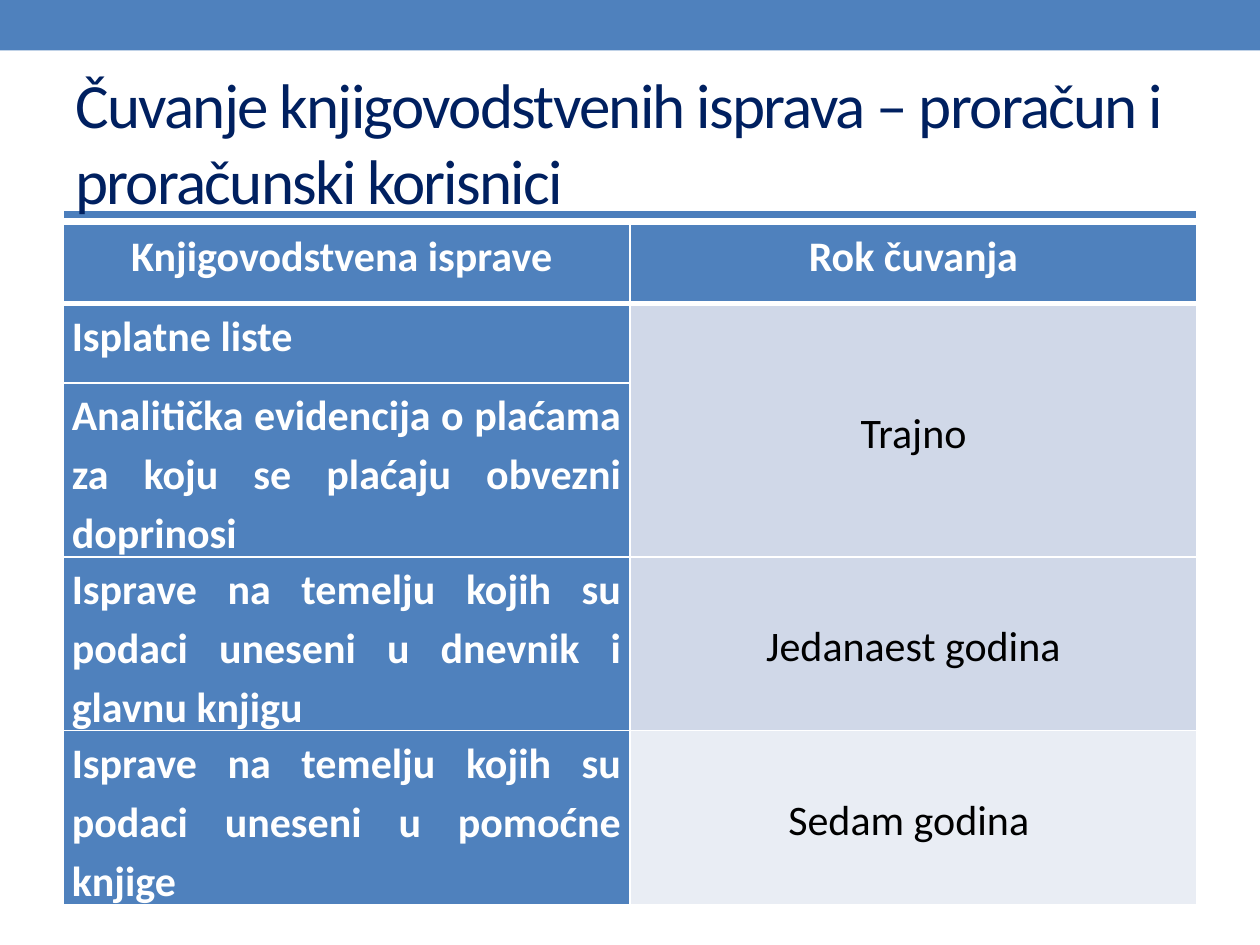
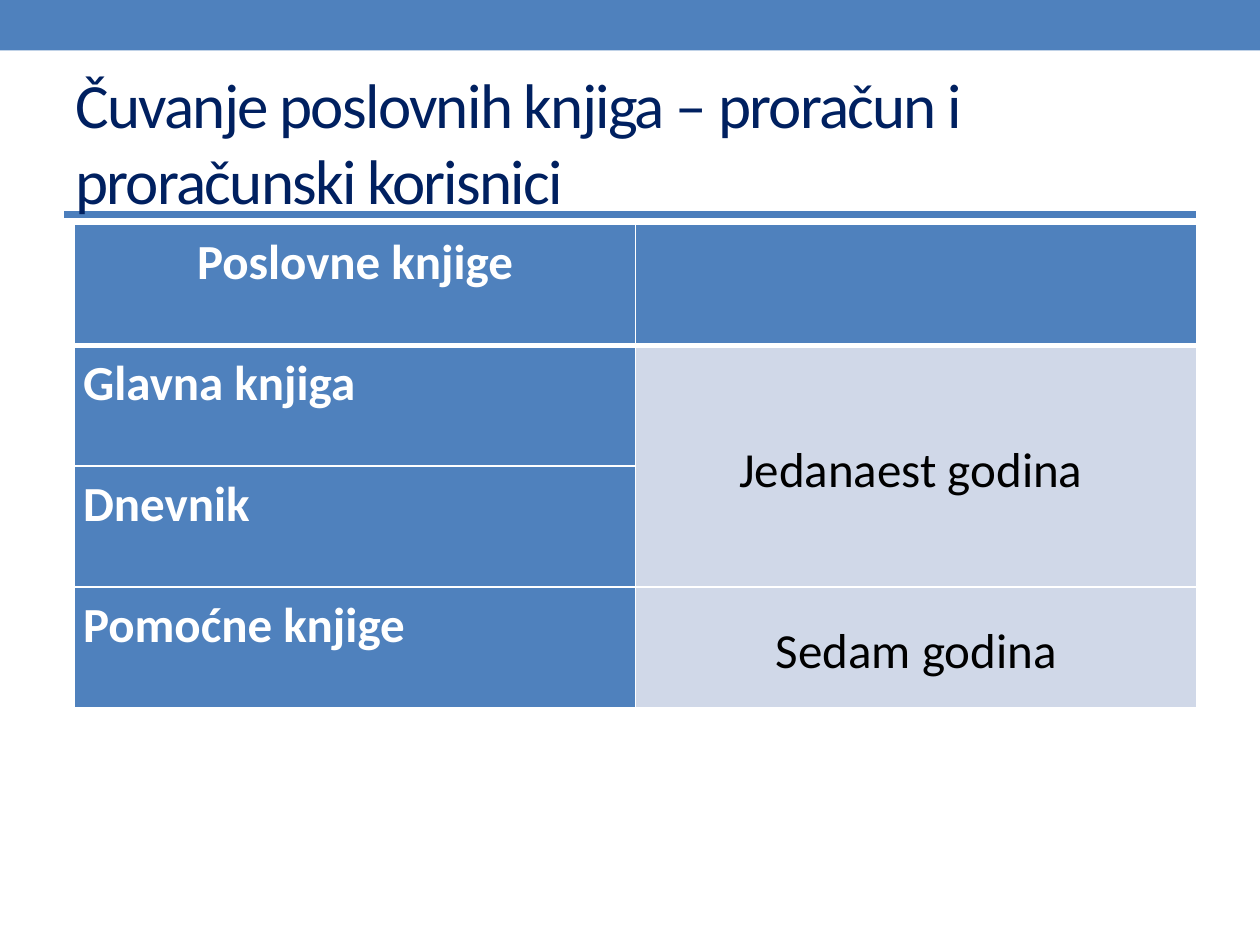
from dataclasses import dataclass

from lxml import etree
from pptx import Presentation
from pptx import util as u
from pptx.dml.color import RGBColor
from pptx.enum import shapes, text
from pptx.oxml.ns import qn


@dataclass(frozen=True)
class Theme:
    """Colours and type sizes shared by the slides."""
    font: str = "Calibri"
    blue: str = "4F81BD"
    rule: str = "4B7EBC"
    navy: str = "002060"
    pale: str = "D0D8E8"
    paler: str = "E9EDF4"
    white: str = "FFFFFF"
    black: str = "000000"
    title_size: int = 36


THEME = Theme()
CENTER, JUSTIFY, LEFT = (text.PP_ALIGN.CENTER, text.PP_ALIGN.JUSTIFY,
                         text.PP_ALIGN.LEFT)


def rgb(colour):
    """Turn a hex string into a colour."""
    return RGBColor.from_string(colour)


def style_runs(paragraph, size, colour, bold=False):
    """Give every run of a paragraph its font."""
    for run in paragraph.runs:
        run.font.name = THEME.font
        run.font.size = u.Pt(size)
        run.font.bold = bold
        run.font.color.rgb = rgb(colour)


def add_header(slide, heading):
    """Draw the top band, the rule and the title."""
    band = slide.shapes.add_shape(shapes.MSO_SHAPE.RECTANGLE, 0, 0,
                                  u.Inches(10), u.Inches(0.4))
    band.shadow.inherit = False
    band.fill.solid()
    band.fill.fore_color.rgb = rgb(THEME.blue)
    band.line.fill.background()

    rule = slide.shapes.add_connector(
        shapes.MSO_CONNECTOR.STRAIGHT, u.Inches(0.51), u.Inches(1.7),
        u.Inches(9.49), u.Inches(1.7))
    rule.line.color.rgb = rgb(THEME.rule)
    rule.line.width = u.Pt(4)
    etree.SubElement(rule._element.spPr, qn("a:effectLst"))

    title = slide.shapes.add_textbox(u.Inches(0.5), u.Inches(0.58),
                                     u.Inches(9), u.Inches(1.08)).text_frame
    title.word_wrap = True
    title.vertical_anchor = text.MSO_ANCHOR.MIDDLE
    title.text = heading
    style_runs(title.paragraphs[0], THEME.title_size, THEME.navy)
    for run in title.paragraphs[0].runs:
        run.font._element.set("spc", "-100")


def set_borders(cell, top, bottom):
    """Give a cell white borders, with top and bottom widths in points."""
    properties = cell._tc.get_or_add_tcPr()
    widths = {"lnL": 1, "lnR": 1, "lnT": top, "lnB": bottom}
    for position, (side, width) in enumerate(widths.items()):
        line = etree.Element(qn(f"a:{side}"), w=str(u.Pt(width)))
        fill = etree.SubElement(line, qn("a:solidFill"))
        etree.SubElement(fill, qn("a:srgbClr"), val=THEME.white)
        properties.insert(position, line)


def fill_cell(cell, wording, size, fill, align, label):
    """Write a cell, as a bold label on blue or as a centred period."""
    cell.fill.solid()
    cell.fill.fore_color.rgb = rgb(fill)
    cell.margin_left = cell.margin_right = u.Inches(0.07)
    cell.margin_top = cell.margin_bottom = 0
    cell.vertical_anchor = (text.MSO_ANCHOR.TOP if label
                            else text.MSO_ANCHOR.MIDDLE)
    if not wording:
        return
    cell.text_frame.text = wording
    paragraph = cell.text_frame.paragraphs[0]
    paragraph.alignment = align
    paragraph.line_spacing = 1.15
    paragraph.space_after = u.Pt(10)
    style_runs(paragraph, size, THEME.white if label else THEME.black, label)


def add_periods_table(slide, left, width, heights, size, headings, records,
                      periods):
    """Draw records beside their keeping periods, each spanning some rows."""
    table = slide.shapes.add_table(
        len(heights), 2, u.Inches(left), u.Inches(1.78), u.Inches(width),
        u.Inches(sum(heights))).table
    for row, height in zip(table.rows, heights):
        row.height = u.Inches(height)
    for row in range(len(heights)):
        for column in range(2):
            set_borders(table.cell(row, column), 3 if row == 1 else 1,
                        3 if row == 0 else 1)
    for column, heading in enumerate(headings):
        fill_cell(table.cell(0, column), heading, size, THEME.blue, CENTER,
                  True)
    for row, (record, align) in enumerate(records, 1):
        fill_cell(table.cell(row, 0), record, size, THEME.blue, align, True)
    row = 1
    for period, span, fill in periods:
        cell = table.cell(row, 1)
        if span > 1:
            cell.merge(table.cell(row + span - 1, 1))
        fill_cell(cell, period, size, fill, CENTER, False)
        row += span


def build_documents_slide(slide):
    """Show how long bookkeeping documents are kept."""
    add_header(slide, "Čuvanje knjigovodstvenih isprava – proračun i "
                      "proračunski korisnici")
    source = "Isprave na temelju kojih su podaci uneseni u "
    records = ["Isplatne liste ",
               "Analitička evidencija o plaćama za koju se plaćaju obvezni "
               "doprinosi",
               source + "dnevnik i glavnu knjigu",
               source + "pomoćne knjige "]
    add_periods_table(
        slide, 0.5, 9, [0.63] * 2 + [1.29] * 3, 24,
        ["Knjigovodstvena isprave ", "Rok čuvanja"],
        [(record, JUSTIFY) for record in records],
        [("Trajno", 2, THEME.pale), ("Jedanaest godina", 1, THEME.pale),
         ("Sedam godina ", 1, THEME.paler)])


def build_books_slide(slide):
    """Show how long business books are kept."""
    add_header(slide, "Čuvanje poslovnih knjiga – proračun i proračunski "
                      "korisnici")
    add_periods_table(
        slide, 0.59, 8.91, [0.96] * 4, 28, ["Poslovne knjige", ""],
        [("Glavna knjiga ", JUSTIFY), ("Dnevnik ", JUSTIFY),
         ("Pomoćne knjige", LEFT)],
        [("Jedanaest godina ", 2, THEME.pale),
         ("Sedam godina", 1, THEME.pale)])


def main():
    """Build and save the presentation."""
    deck = Presentation()
    deck.slide_width, deck.slide_height = u.Inches(10), u.Inches(7.5)
    for build in (build_documents_slide, build_books_slide):
        build(deck.slides.add_slide(deck.slide_layouts[6]))
    deck.save("out.pptx")


if __name__ == "__main__":
    main()
